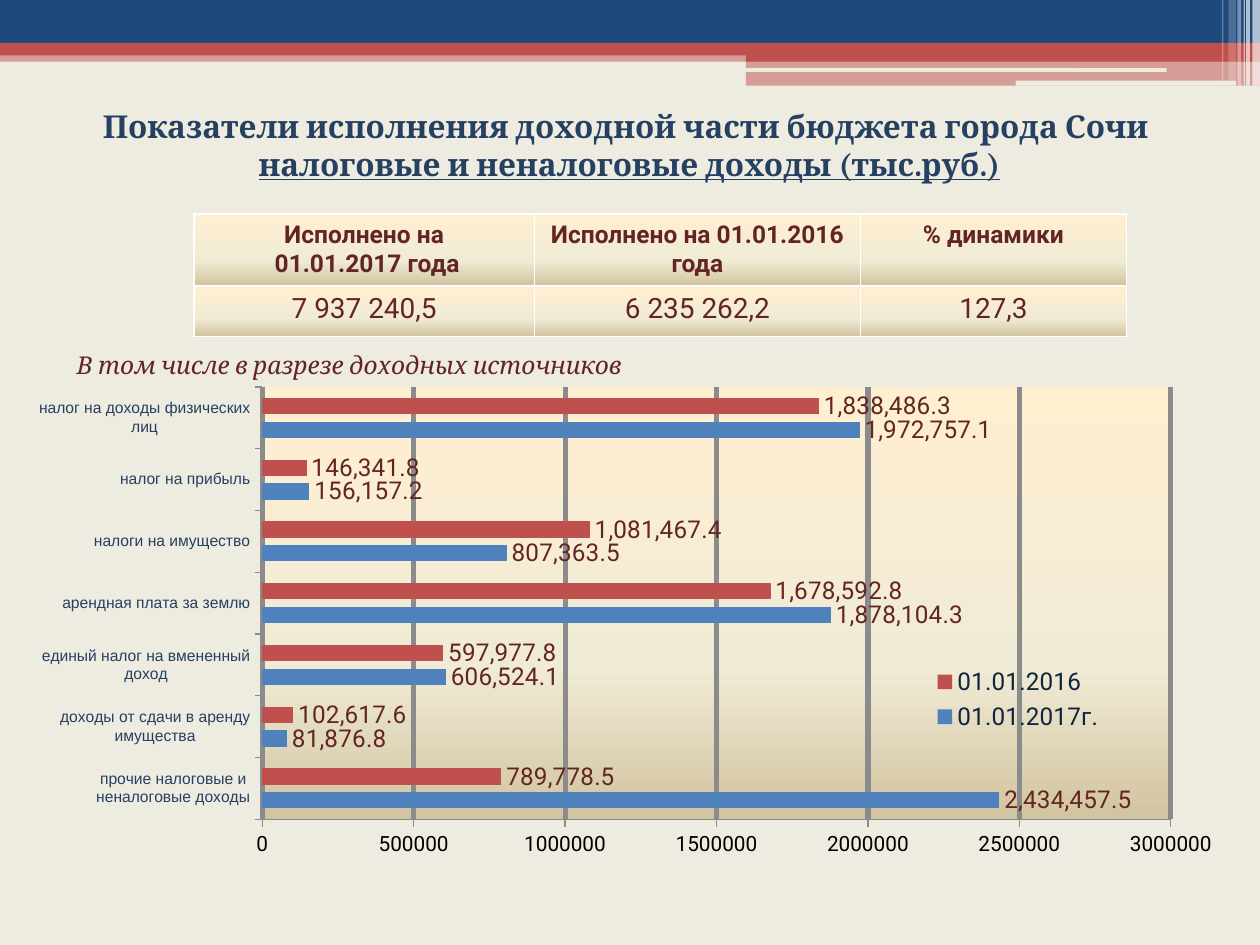
"""Build the slide on city budget income: title, totals table and bar chart."""
from lxml import etree
from pptx import Presentation
from pptx.chart.data import CategoryChartData
from pptx.dml.color import RGBColor as RGB
from pptx.enum.chart import XL_CHART_TYPE as KIND, XL_LABEL_POSITION as POS
from pptx.enum.chart import XL_LEGEND_POSITION as SIDE, XL_TICK_MARK as TICK
from pptx.enum.shapes import MSO_SHAPE as SHAPE
from pptx.enum.text import MSO_ANCHOR as ANCHOR, PP_ALIGN as ALIGN
from pptx.oxml import parse_xml
from pptx.oxml.ns import nsdecls, qn
from pptx.util import Inches, Pt

HEX = {
    "paper": "EEECE1", "navy": "1F497D", "red": "C0504D", "blue": "4F81BD",
    "white": "FFFFFF", "title": "254061", "wine": "632523", "key": "0F243E",
    "black": "000000", "grid": "8B8B8B",
}
STOPS = [(0, "FFEFD1"), (65, "F0EBD5"), (100, "D1C39F")]


def style(font, face, size, tone, bold=False):
    font.name, font.size, font.bold = face, Pt(size), bold
    font.color.rgb = RGB.from_string(HEX[tone])


def sand():
    stops = "".join(
        f'<a:gs pos="{pos * 1000}"><a:srgbClr val="{tone}"/></a:gs>' for pos, tone in STOPS)
    return parse_xml(f'<a:gradFill {nsdecls("a")} rotWithShape="1"><a:gsLst>{stops}</a:gsLst>'
                     '<a:lin ang="5400000" scaled="0"/></a:gradFill>')


deck = Presentation()
deck.slide_width, deck.slide_height = Inches(10), Inches(7.5)
slide = deck.slides.add_slide(deck.slide_layouts[5])
slide.background.fill.solid()
slide.background.fill.fore_color.rgb = RGB.from_string(HEX["paper"])

bands = [
    (0, 0.4, 10, 0.09, "red", 50),
    (0, 0, 10, 0.34, "navy", 100),
    (0, 0.34, 10, 0.1, "red", 100),
    (5.92, 0.39, 4.08, 0.1, "red", 100),
    (5.92, 0.48, 4.08, 0.2, "red", 50),
    (5.91, 0.54, 3.35, 0.03, "paper", 100),
    (8.06, 0.64, 1.75, 0.04, "paper", 100),
    (9.94, 0, 0.06, 0.68, "white", 65),
    (9.89, 0, 0.03, 0.68, "white", 65),
    (9.87, 0, 0.01, 0.68, "white", 60),
    (9.82, 0, 0.03, 0.68, "white", 40),
    (9.75, 0, 0.06, 0.64, "white", 20),
    (9.7, 0, 0.01, 0.64, "white", 30),
]
for *place, tone, alpha in bands:
    form = SHAPE.ROUNDED_RECTANGLE if tone == "paper" else SHAPE.RECTANGLE
    band = slide.shapes.add_shape(form, *map(Inches, place))
    band.shadow.inherit = False
    band.line.fill.background()
    band.fill.solid()
    band.fill.fore_color.rgb = RGB.from_string(HEX[tone])
    if alpha < 100:
        color = band.fill._xPr.find(".//" + qn("a:srgbClr"))
        etree.SubElement(color, qn("a:alpha")).set("val", str(alpha * 1000))

title = slide.shapes.title
title.left, title.top, title.width, title.height = map(Inches, (0.31, 0.8, 9.37, 0.71))
frame = title.text_frame
frame.vertical_anchor = ANCHOR.TOP
frame.text = ("Показатели исполнения доходной части бюджета города Сочи \n"
              "налоговые и неналоговые доходы (тыс.руб.)")
for para in frame.paragraphs:
    para.alignment = ALIGN.CENTER
    para.space_before = Pt(0)
    style(para.runs[0].font, "Cambria", 18, "title", True)
frame.paragraphs[1].runs[0].font.underline = True

data = CategoryChartData()
data.categories = [
    "прочие налоговые и неналоговые доходы", "доходы от сдачи в аренду имущества",
    "единый налог на вмененный доход", "арендная плата за землю",
    "налоги на имущество", "налог на прибыль", "налог на доходы физических лиц",
]
data.add_series("01.01.2017г.", [
    2434457.5, 81876.8, 606524.1, 1878104.3, 807363.5, 156157.2, 1972757.1])
data.add_series("01.01.2016", [
    789778.5, 102617.6, 597977.8, 1678592.8, 1081467.4, 146341.8, 1838486.3])
chart = slide.shapes.add_chart(
    KIND.BAR_CLUSTERED, *map(Inches, (0.31, 2.94, 9.57, 4.54)), data).chart
chart.has_title = False
style(chart.font, "Cambria", 18, "black")

plot = chart.plots[0]
plot.gap_width, plot.overlap = 134, -45
plot.vary_by_categories = False
for row, tone in zip(plot.series, ("blue", "red")):
    row.format.fill.solid()
    row.format.fill.fore_color.rgb = RGB.from_string(HEX[tone])
    tags = row.data_labels
    tags.show_value = True
    tags.position = POS.OUTSIDE_END
    tags.number_format, tags.number_format_is_linked = "#,##0.0", False
    style(tags.font, "Roboto", 14, "wine")

cats, vals = chart.category_axis, chart.value_axis
for axis in (cats, vals):
    axis.major_tick_mark, axis.minor_tick_mark = TICK.OUTSIDE, TICK.NONE
    axis.format.line.color.rgb = RGB.from_string(HEX["grid"])
style(cats.tick_labels.font, "Arial", 9, "title")
style(vals.tick_labels.font, "Roboto", 12, "black")
vals.minimum_scale, vals.maximum_scale, vals.major_unit = 0, 3000000, 500000
vals.tick_labels.number_format = "0"
vals.tick_labels.number_format_is_linked = False
vals.has_major_gridlines = True
vals.major_gridlines.format.line.width = Pt(3)
vals.major_gridlines.format.line.color.rgb = RGB.from_string(HEX["grid"])

chart.has_legend = True
legend = chart.legend
legend.position, legend.include_in_layout = SIDE.RIGHT, False
style(legend.font, "Roboto", 14, "key")

area = chart._chartSpace.find(".//" + qn("c:plotArea"))
boxes = [
    (area, '<c:layoutTarget val="inner"/>', (0.177, 0.029, 0.761, 0.756)),
    (legend._element, "", (0.73, 0.51, 0.16, 0.13)),
]
for host, target, place in boxes:
    for old in host.findall(qn("c:layout")):
        host.remove(old)
    modes = "".join(f'<c:{side}Mode val="edge"/>' for side in "xy")
    sizes = "".join(f'<c:{side} val="{num}"/>' for side, num in zip("xywh", place))
    layout = parse_xml(f'<c:layout {nsdecls("c")}><c:manualLayout>{target}{modes}{sizes}'
                       '</c:manualLayout></c:layout>')
    host.insert(0 if host is area else 1, layout)
etree.SubElement(area, qn("c:spPr")).append(sand())

table = slide.shapes.add_table(2, 3, *map(Inches, (1.54, 1.7, 7.4, 0.97))).table
for col, width in zip(table.columns, (2.7, 2.59, 2.11)):
    col.width = Inches(width)
for line, height in zip(table.rows, (0.57, 0.4)):
    line.height = Inches(height)
texts = [
    ("Исполнено на\n 01.01.2017 года", "Исполнено на 01.01.2016 года", "% динамики"),
    ("7 937 240,5", "6 235 262,2", "127,3"),
]
for line, words, size in zip(table.rows, texts, (14, 16)):
    for cell, text in zip(line.cells, words):
        cell.text_frame.text = text
        cell._tc.get_or_add_tcPr().append(sand())
        for para in cell.text_frame.paragraphs:
            para.alignment = ALIGN.CENTER
            style(para.runs[0].font, "Roboto", size, "wine", size == 14)

note = slide.shapes.add_textbox(*map(Inches, (0.51, 2.73, 4.72, 0.34))).text_frame
note.word_wrap = True
note.text = "В том числе в разрезе доходных источников"
font = note.paragraphs[0].runs[0].font
style(font, "Cambria", 14, "wine")
font.italic = True

deck.save("out.pptx")
